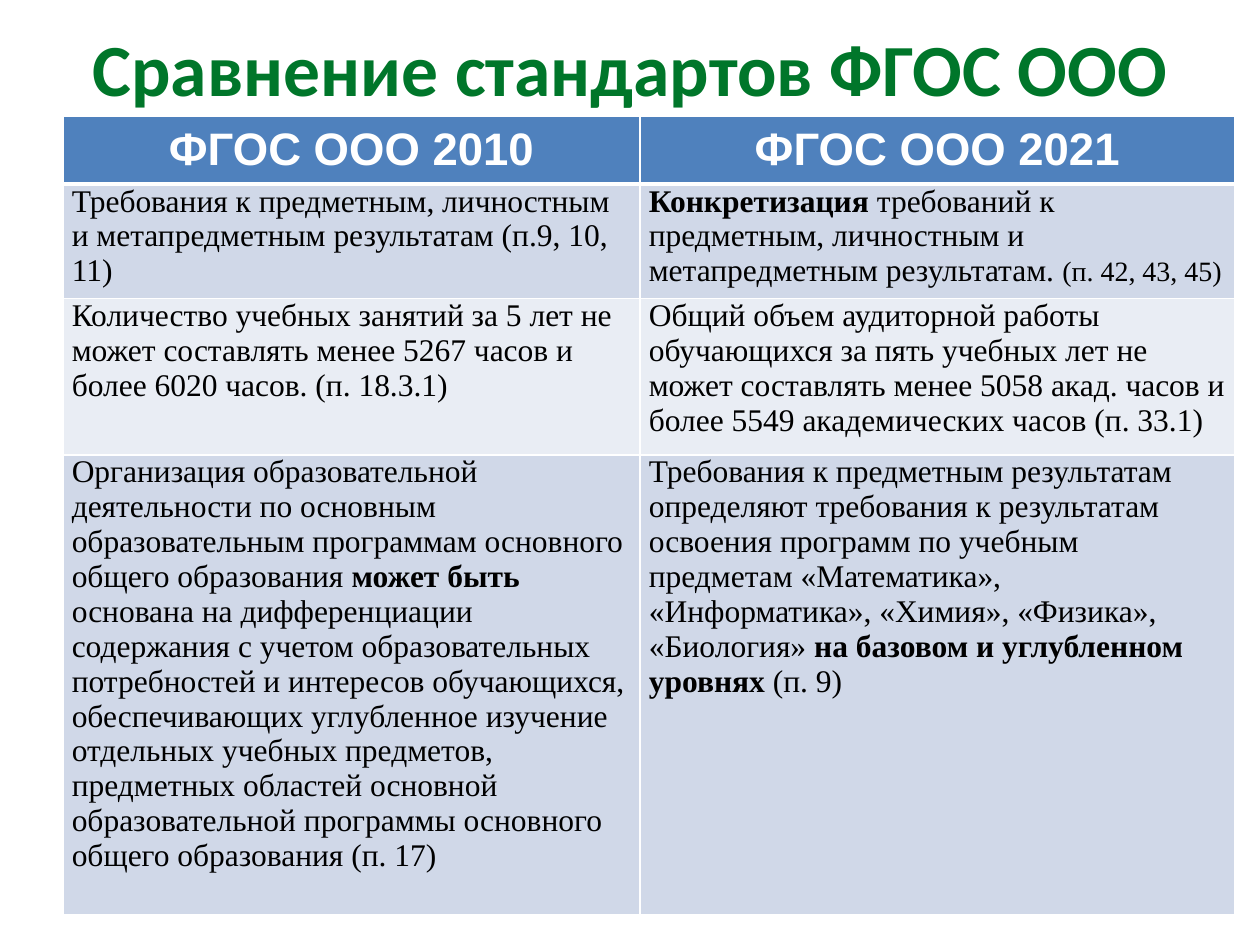
from pptx import Presentation
from pptx import util as u
from pptx.dml.color import RGBColor
from pptx.enum import text
from pptx.oxml.ns import qn
from lxml import etree

COLORS = {"title": "00762A", "header": "4F81BD", "odd": "D0D8E8", "even": "E9EDF4",
          "white": "FFFFFF", "black": "000000"}
TITLE = "Сравнение стандартов ФГОС ООО"
HEADERS = ["ФГОС ООО 2010", "ФГОС ООО 2021"]
BOLD = {"bold": True}
ROWS = [
    (
        [[("Требования к предметным, личностным и метапредметным результатам (п.9, 10, 11)", {})]],
        [[("Конкретизация", BOLD),
          (" требований к предметным, личностным и метапредметным результатам. ", {}),
          ("(п. 42, 43, 45)", {"size": 16})]],
    ),
    (
        [[("Количество учебных занятий за 5 лет не может составлять менее 5267 часов "
           "и более 6020 часов. (п. 18.3.1)", {})]],
        [[("Общий объем аудиторной работы обучающихся за пять учебных лет не может составлять "
           "менее 5058 акад. часов и более 5549 академических часов (п. 33.1)", {})]],
    ),
    (
        [[("Организация образовательной деятельности по основным образовательным программам "
           "основного общего образования ", {}),
          ("может быть ", BOLD),
          ("основана на дифференциации содержания с учетом образовательных потребностей и "
           "интересов обучающихся, обеспечивающих углубленное изучение отдельных учебных "
           "предметов,", {})],
         [("предметных областей основной образовательной программы основного общего "
           "образования (п. 17)", {})]],
        [[("Требования к предметным результатам определяют требования к результатам освоения "
           "программ по учебным предметам «Математика», «Информатика», «Химия», «Физика», "
           "«Биология» ", {}),
          ("на базовом и углубленном уровнях", BOLD),
          (" (п. 9)", {})]],
    ),
]
COLUMN_WIDTHS = [4.58, 4.72]
ROW_HEIGHTS = [0.54, 0.91, 1.24, 3.65]


def add_run(paragraph, content, size=18, font="Times New Roman", color="black", bold=False):
    run = paragraph.add_run()
    run.text = content
    run.font.size = u.Pt(size)
    run.font.name = font
    run.font.bold = bold
    run.font.color.rgb = RGBColor.from_string(COLORS[color])


def format_cell(cell, fill, top=1, bottom=1):
    properties = cell._tc.get_or_add_tcPr()
    for side, width in (("L", 1), ("R", 1), ("T", top), ("B", bottom)):
        line = etree.SubElement(properties, qn(f"a:ln{side}"), w=str(u.Pt(width)))
        solid = etree.SubElement(line, qn("a:solidFill"))
        etree.SubElement(solid, qn("a:srgbClr"), val=COLORS["white"])
    cell.fill.solid()
    cell.fill.fore_color.rgb = RGBColor.from_string(COLORS[fill])


def add_title(slide):
    title = slide.shapes.title
    title.left, title.top, title.width, title.height = map(u.Inches, (0.5, 0.3, 9, 0.46))
    frame = title.text_frame
    frame.auto_size = text.MSO_AUTO_SIZE.NONE
    frame.word_wrap = True
    frame.vertical_anchor = text.MSO_ANCHOR.MIDDLE
    paragraph = frame.paragraphs[0]
    paragraph.alignment = text.PP_ALIGN.CENTER
    add_run(paragraph, TITLE, size=42, font="Calibri", color="title", bold=True)


def add_comparison(slide):
    table = slide.shapes.add_table(
        len(ROW_HEIGHTS), len(COLUMN_WIDTHS), u.Inches(0.5), u.Inches(0.92),
        u.Inches(sum(COLUMN_WIDTHS)), u.Inches(sum(ROW_HEIGHTS))).table
    for column, width in zip(table.columns, COLUMN_WIDTHS):
        column.width = u.Inches(width)
    for row, height in zip(table.rows, ROW_HEIGHTS):
        row.height = u.Inches(height)

    for column, header in enumerate(HEADERS):
        cell = table.cell(0, column)
        format_cell(cell, "header", bottom=3)
        cell.vertical_anchor = text.MSO_ANCHOR.MIDDLE
        paragraph = cell.text_frame.paragraphs[0]
        paragraph.alignment = text.PP_ALIGN.CENTER
        add_run(paragraph, header, size=26, font="Arial", color="white", bold=True)

    for row, contents in enumerate(ROWS, 1):
        for column, paragraphs in enumerate(contents):
            cell = table.cell(row, column)
            format_cell(cell, "odd" if row % 2 else "even", top=3 if row == 1 else 1)
            cell.margin_left = cell.margin_right = u.Inches(0.07)
            cell.margin_top = cell.margin_bottom = 0
            frame = cell.text_frame
            for index, runs in enumerate(paragraphs):
                paragraph = frame.add_paragraph() if index else frame.paragraphs[0]
                for content, style in runs:
                    add_run(paragraph, content, **style)


def main():
    presentation = Presentation()
    presentation.slide_width = u.Inches(10)
    presentation.slide_height = u.Inches(7.5)
    slide = presentation.slides.add_slide(presentation.slide_layouts[5])
    add_title(slide)
    add_comparison(slide)
    presentation.save("out.pptx")


if __name__ == "__main__":
    main()
